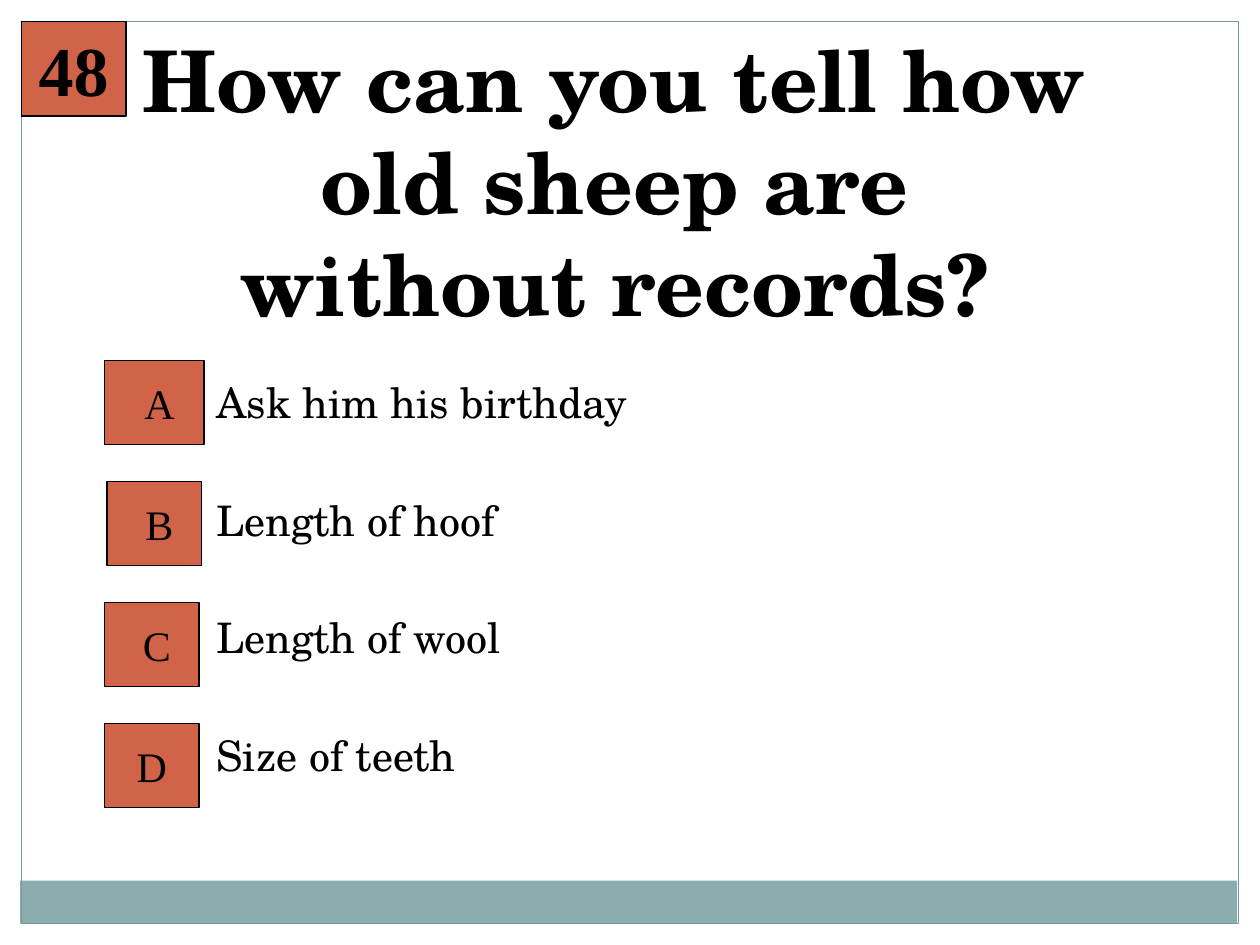
from pptx import Presentation
from pptx.dml.color import RGBColor
from pptx.enum.shapes import MSO_SHAPE as Preset
from pptx.enum.text import MSO_ANCHOR as Anchor, PP_ALIGN as Align
from pptx.util import Inches, Pt

BLACK = RGBColor(0x00, 0x00, 0x00)
TEAL = RGBColor(0x8C, 0xAD, 0xAE)
FRAME_GRAY = RGBColor(0x7C, 0x99, 0x9A)
RUST = RGBColor(0xD1, 0x63, 0x49)
BODY_FONT = "TeX Gyre Schola"
LABEL_FONT = "Times New Roman"

QUESTION = "How can you tell how old sheep are without records?"
ANSWERS = ["Ask him his birthday", "Length of hoof", "Length of wool", "Size of teeth"]
BUTTONS = [
    ("A", 0.83, 0.79, 0.18),
    ("B", 0.85, 0.75, 0.18),
    ("C", 0.83, 0.75, 0.18),
    ("D", 0.83, 0.75, 0.1),
]
BUTTON_TOP, BUTTON_PITCH, BUTTON_HEIGHT = 2.86, 0.96, 0.67


def write_text(paragraph, text, size, font=BODY_FONT, bold=False, align=Align.LEFT, before=0):
    """Put formatted text into a paragraph."""
    paragraph.text = text
    paragraph.alignment = align
    paragraph.font.size = Pt(size)
    paragraph.font.name = font
    paragraph.font.bold = bold
    paragraph.font.color.rgb = BLACK
    if before:
        paragraph.space_before = Pt(before)


def add_panel(slide, box, preset=Preset.RECTANGLE, fill=None, line=None):
    """Add a flat shape with an optional fill and outline."""
    shape = slide.shapes.add_shape(preset, *map(Inches, box))
    shape.shadow.inherit = False
    if fill is None:
        shape.fill.background()
    else:
        shape.fill.solid()
        shape.fill.fore_color.rgb = fill
    if line is None:
        shape.line.fill.background()
    else:
        shape.line.color.rgb = line
        shape.line.width = Pt(0.75)
    return shape


def add_label(slide, text, box, size, preset=Preset.RECTANGLE, bold=False, left_inset=0.1):
    """Add a rust-coloured shape with a centred label."""
    shape = add_panel(slide, box, preset, RUST, BLACK)
    frame = shape.text_frame
    frame.word_wrap = False
    frame.vertical_anchor = Anchor.MIDDLE
    frame.margin_left = Inches(left_inset)
    write_text(frame.paragraphs[0], text, size, LABEL_FONT, bold, Align.CENTER)


def add_text(slide, lines, box, size, anchor=Anchor.TOP, gap=0, **text_format):
    """Add a wrapped text box with a gap between its paragraphs."""
    frame = slide.shapes.add_textbox(*map(Inches, box)).text_frame
    frame.word_wrap = True
    frame.vertical_anchor = anchor
    for index, line in enumerate(lines):
        paragraph = frame.add_paragraph() if index else frame.paragraphs[0]
        write_text(paragraph, line, size, before=gap if index else 0, **text_format)


def main():
    """Build the quiz slide and save it."""
    presentation = Presentation()
    presentation.slide_width = Inches(10)
    presentation.slide_height = Inches(7.5)
    slide = presentation.slides.add_slide(presentation.slide_layouts[6])

    add_panel(slide, (0.16, 6.99, 9.66, 0.34), fill=TEAL)
    add_panel(slide, (0.17, 0.17, 9.66, 7.16), line=FRAME_GRAY)
    add_text(slide, [QUESTION], (1.01, 1.03, 7.73, 1.67), 48.6,
             anchor=Anchor.BOTTOM, bold=True, align=Align.CENTER)
    add_text(slide, ANSWERS, (1.62, 2.94, 8.17, 3.97), 24, gap=38.4)
    for row, (letter, left, width, inset) in enumerate(BUTTONS):
        box = (left, BUTTON_TOP + row * BUTTON_PITCH, width, BUTTON_HEIGHT)
        add_label(slide, letter, box, 24, Preset.ACTION_BUTTON_CUSTOM, left_inset=inset)
    add_label(slide, "48", (0.17, 0.17, 0.83, 0.75), 40, bold=True)

    presentation.save("out.pptx")


if __name__ == "__main__":
    main()
